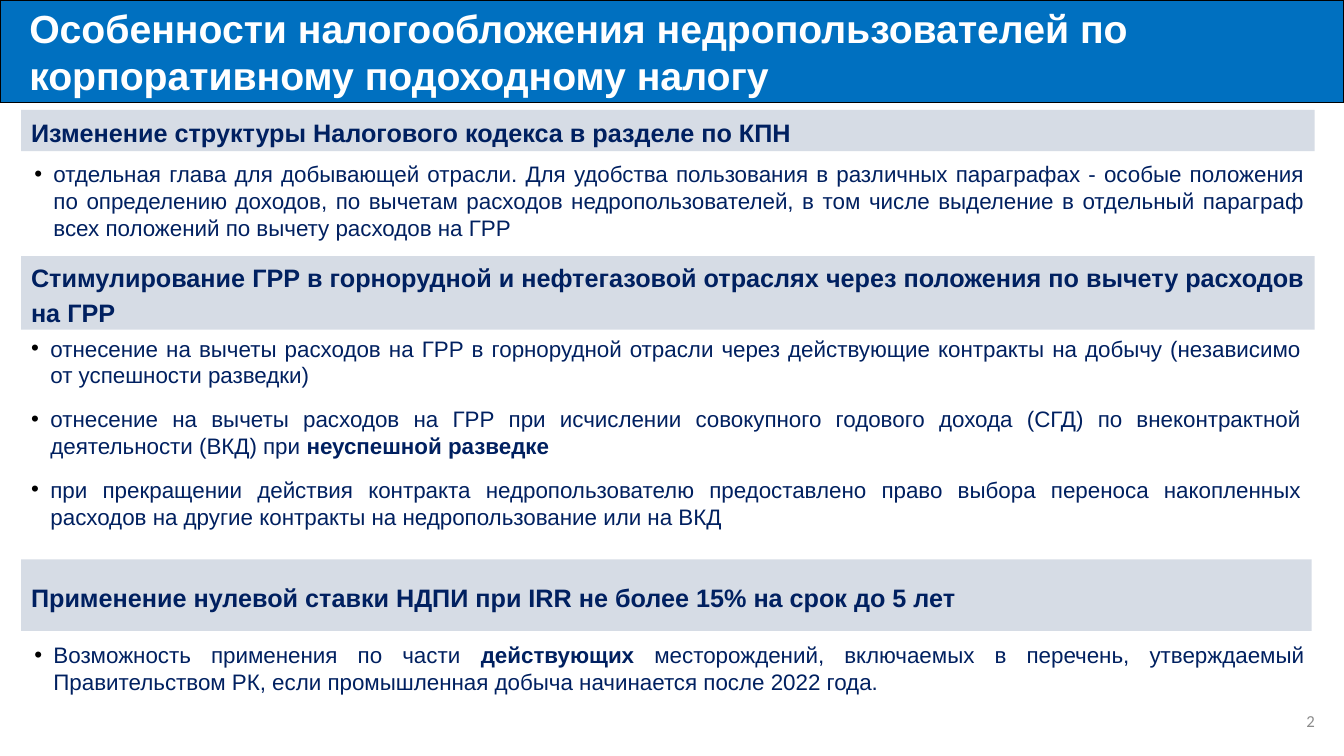
"""Build the slide on corporate income tax for subsoil users."""
from lxml import etree
from pptx import Presentation
from pptx.dml.color import RGBColor
from pptx.enum.shapes import MSO_SHAPE
from pptx.enum.text import MSO_ANCHOR, MSO_AUTO_SIZE, PP_ALIGN
from pptx.oxml.ns import qn
from pptx.util import Inches, Pt

RECTANGLE = MSO_SHAPE.RECTANGLE
TOP, MIDDLE = MSO_ANCHOR.TOP, MSO_ANCHOR.MIDDLE
LEFT, RIGHT, JUSTIFY = PP_ALIGN.LEFT, PP_ALIGN.RIGHT, PP_ALIGN.JUSTIFY
NO_AUTOFIT = MSO_AUTO_SIZE.NONE
BLUE = RGBColor(0x00, 0x70, 0xC0)
NAVY = RGBColor(0x00, 0x20, 0x60)
PALE = RGBColor(0xD6, 0xDC, 0xE5)
GREY = RGBColor(0x8C, 0x8C, 0x8C)
WHITE = RGBColor(0xFF, 0xFF, 0xFF)
BLACK = RGBColor(0x00, 0x00, 0x00)


def write(box, paragraphs, size=16, color=NAVY, bold=False, font="Arial", align=JUSTIFY,
          anchor=MIDDLE, spacing=1.0, gap=0, margin=0, bullet=False):
    """Fill a box; every second run of a paragraph is emphasised."""
    frame = box.text_frame
    frame.word_wrap = True
    frame.auto_size = NO_AUTOFIT
    frame.vertical_anchor = anchor
    for number, runs in enumerate(paragraphs):
        paragraph = frame.add_paragraph() if number else frame.paragraphs[0]
        properties = paragraph._p.get_or_add_pPr()
        properties.set("marL", str(Inches(margin)))
        properties.set("indent", str(Inches(-margin if bullet else 0)))
        if bullet:
            bullet_color = etree.SubElement(properties, qn("a:buClr"))
            etree.SubElement(bullet_color, qn("a:srgbClr"), val=str(BLACK))
            etree.SubElement(properties, qn("a:buFont"), typeface="Arial")
            etree.SubElement(properties, qn("a:buChar"), char="•")
        paragraph.alignment = align
        paragraph.line_spacing = spacing
        paragraph.space_before = Pt(gap if number else 0)
        paragraph.space_after = Pt(gap)
        for position, text in enumerate(runs):
            run = paragraph.add_run()
            run.text = text
            run.font.name = font
            run.font.size = Pt(size)
            run.font.bold = bold or position % 2 == 1
            run.font.color.rgb = color


presentation = Presentation()
presentation.slide_width = Inches(13.33)
presentation.slide_height = Inches(7.5)
slide = presentation.slides.add_slide(presentation.slide_layouts.get_by_name("Comparison"))
title = slide.shapes.title
first_list, second_list, spare, third_list = list(slide.placeholders)[1:5]
spare.element.getparent().remove(spare.element)

title.left, title.top = Inches(0), Inches(0)
title.width, title.height = presentation.slide_width, Inches(1.02)
title.fill.solid()
title.fill.fore_color.rgb = BLUE
title.line.color.rgb = BLACK
title.line.width = Pt(1)
write(title, [["Особенности налогообложения недропользователей по корпоративному подоходному налогу"]],
      size=28, color=WHITE, bold=True, align=LEFT, margin=0.19)

sections = [
    ("Изменение структуры Налогового кодекса в разделе по КПН",
     (1.09, 12.83, 0.41), first_list, (0.24, 1.54, 0.91),
     [["отдельная глава для добывающей отрасли. Для удобства пользования в различных параграфах - "
       "особые положения по определению доходов, по вычетам расходов недропользователей, в том "
       "числе выделение в отдельный параграф всех положений по вычету расходов на ГРР"]]),
    ("Стимулирование ГРР в горнорудной и нефтегазовой отраслях через положения по вычету "
     "расходов на ГРР",
     (2.54, 12.83, 0.73), second_list, (0.21, 3.27, 2.05),
     [["отнесение на вычеты расходов на ГРР в горнорудной отрасли через действующие контракты "
       "на добычу (независимо от успешности разведки)"],
      ["отнесение на вычеты расходов на ГРР при исчислении совокупного годового дохода (СГД) "
       "по внеконтрактной деятельности (ВКД) при ", "неуспешной разведке"],
      ["при прекращении действия контракта недропользователю предоставлено право выбора "
       "переноса накопленных расходов на другие контракты на недропользование или на ВКД"]]),
    ("Применение нулевой ставки НДПИ при IRR не более 15% на срок до 5 лет",
     (5.55, 12.8, 0.71), third_list, (0.24, 6.31, 0.64),
     [["Возможность применения по части ", "действующих",
       " месторождений, включаемых в перечень, утверждаемый Правительством РК, если "
       "промышленная добыча начинается после 2022 года."]]),
]
for heading, (band_top, band_width, band_height), points, place, items in sections:
    band = slide.shapes.add_shape(RECTANGLE, Inches(0.21), Inches(band_top),
                                  Inches(band_width), Inches(band_height))
    band.shadow.inherit = False
    band.fill.solid()
    band.fill.fore_color.rgb = PALE
    band.line.fill.background()
    write(band, [[heading]], size=18, bold=True, spacing=1.14)

    points.left, points.top, points.height = map(Inches, place)
    points.width = Inches(12.8)
    write(points, items, anchor=TOP, gap=6, margin=0.19, bullet=True)

page_number = slide.shapes.add_textbox(Inches(10.14), Inches(6.95), Inches(3), Inches(0.4))
write(page_number, [["2"]], size=12, color=GREY, font="Calibri", align=RIGHT)

presentation.save("out.pptx")
